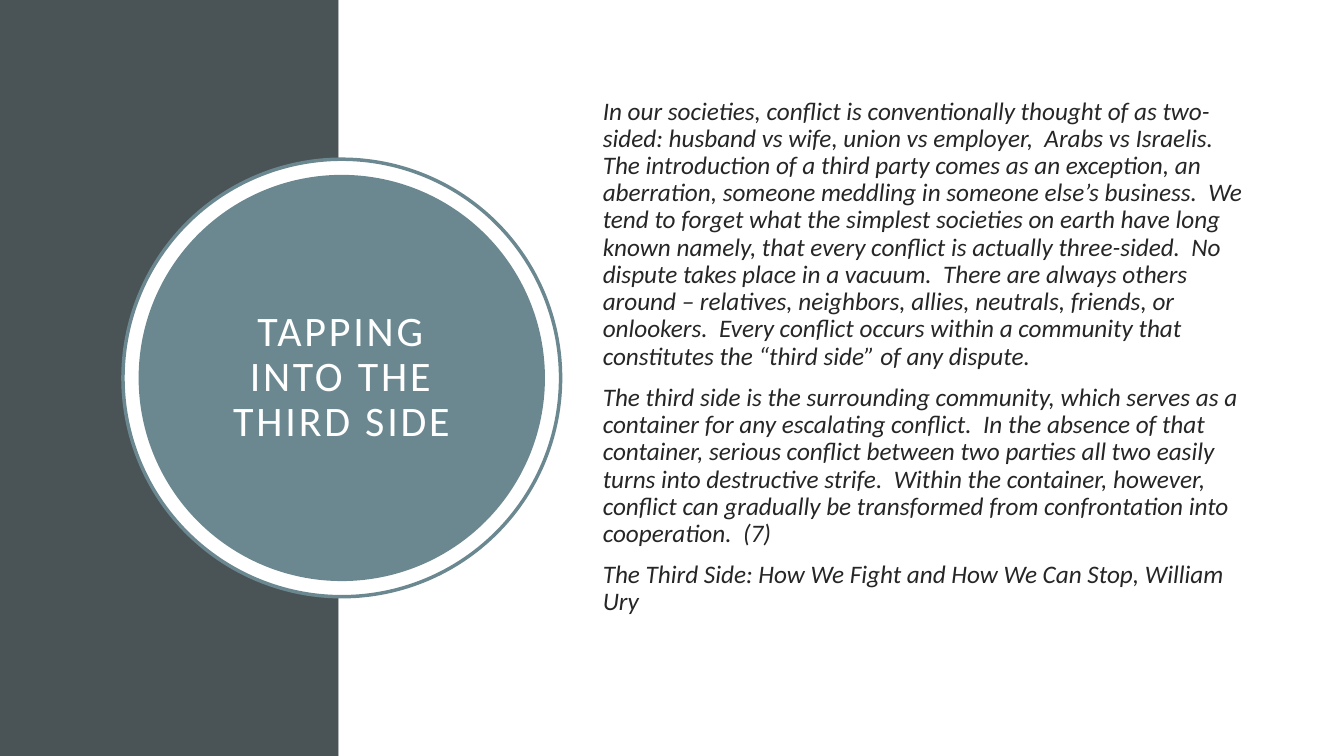
from pptx import Presentation
from pptx.dml.color import RGBColor
from pptx.enum.shapes import MSO_SHAPE
from pptx.enum.text import MSO_ANCHOR, PP_ALIGN
from pptx.util import Inches, Pt

RECT, OVAL = MSO_SHAPE.RECTANGLE, MSO_SHAPE.OVAL
MIDDLE = MSO_ANCHOR.MIDDLE
LEFT, CENTER = PP_ALIGN.LEFT, PP_ALIGN.CENTER

WIDE, HIGH, BAND = 13.33, 7.5, 3.36
MID_X, MID_Y = 3.39, 3.75
RING, DISC = 4.34, 4.03

COLORS = {"slate": "4A5356", "teal": "6B8891", "white": "FFFFFF", "ink": "262626"}

TITLE = "TAPPING INTO THE THIRD SIDE"
QUOTES = [
    "In our societies, conflict is conventionally thought of as two-sided: "
    "husband vs wife, union vs employer,  Arabs vs Israelis.  The introduction "
    "of a third party comes as an exception, an aberration, someone meddling in "
    "someone else’s business.  We tend to forget what the simplest societies on "
    "earth have long known namely, that every conflict is actually three-sided.  "
    "No dispute takes place in a vacuum.  There are always others around – "
    "relatives, neighbors, allies, neutrals, friends, or onlookers.  Every "
    "conflict occurs within a community that constitutes the “third side” of any "
    "dispute.",
    "The third side is the surrounding community, which serves as a container for "
    "any escalating conflict.  In the absence of that container, serious conflict "
    "between two parties all two easily turns into destructive strife.  Within the "
    "container, however, conflict can gradually be transformed from confrontation "
    "into cooperation.  (7)",
    "The Third Side: How We Fight and How We Can Stop, William Ury",
]


def color(name):
    """Return the named colour."""
    return RGBColor.from_string(COLORS[name])


def write(frame, lines, size, ink, align=LEFT, italic=False, track=0,
          before=0, after=0, pads=(0.1, 0.05, 0.1, 0.05)):
    """Fill a text frame with formatted paragraphs."""
    frame.word_wrap = True
    frame.vertical_anchor = MIDDLE
    (frame.margin_left, frame.margin_top,
     frame.margin_right, frame.margin_bottom) = map(Inches, pads)
    for i, line in enumerate(lines):
        para = frame.add_paragraph() if i else frame.paragraphs[0]
        para.alignment = align
        para.line_spacing = 0.9
        para.space_before, para.space_after = Pt(before), Pt(after)
        run = para.add_run()
        run.text = line
        font = run.font
        font.name, font.size, font.italic = "Calibri", Pt(size), italic
        font.color.rgb = color(ink)
        if track:
            run._r.get_or_add_rPr().set("spc", str(track * 100))


class Page:
    """Draw styled elements on one slide."""

    def __init__(self, slide):
        """Keep the slide to draw on."""
        self.slide = slide

    def shape(self, kind, box, fill, line=None, weight=2.5):
        """Add a filled preset shape."""
        item = self.slide.shapes.add_shape(kind, *map(Inches, box))
        item.shadow.inherit = False
        item.fill.solid()
        item.fill.fore_color.rgb = color(fill)
        if line:
            item.line.color.rgb = color(line)
            item.line.width = Pt(weight)
        else:
            item.line.fill.background()
        return item

    def circle(self, size, fill, line=None):
        """Add a circle around the shared centre."""
        box = (MID_X - size / 2, MID_Y - size / 2, size, size)
        return self.shape(OVAL, box, fill, line)

    def text(self, box, lines, **style):
        """Add a text box."""
        item = self.slide.shapes.add_textbox(*map(Inches, box))
        write(item.text_frame, lines, **style)


def main():
    """Build and save the slide."""
    deck = Presentation()
    deck.slide_width, deck.slide_height = Inches(WIDE), Inches(HIGH)
    page = Page(deck.slides.add_slide(deck.slide_layouts[6]))

    page.shape(RECT, (0, 0, BAND, HIGH), "slate")
    page.shape(RECT, (BAND, 0, WIDE - BAND, HIGH), "white")
    page.circle(RING, "white", "teal")
    disc = page.circle(DISC, "teal")
    write(disc.text_frame, [TITLE], size=30, ink="white", align=CENTER,
          track=2, after=6, pads=(0.2,) * 4)
    page.text((5.88, 1, 6.55, 5.45), QUOTES, size=18, ink="ink", italic=True,
              before=10, pads=(0.1, 0.05, 0.1, 0.41))
    deck.save("out.pptx")


if __name__ == "__main__":
    main()
